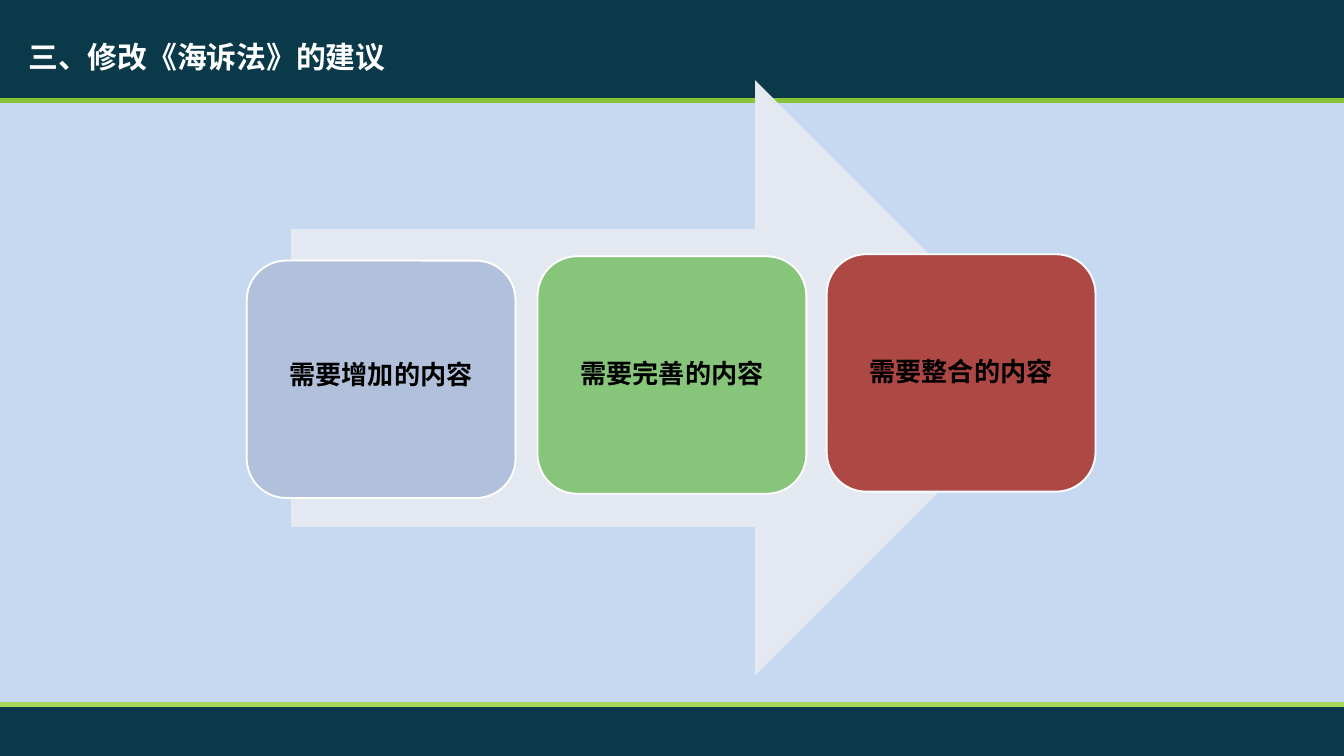
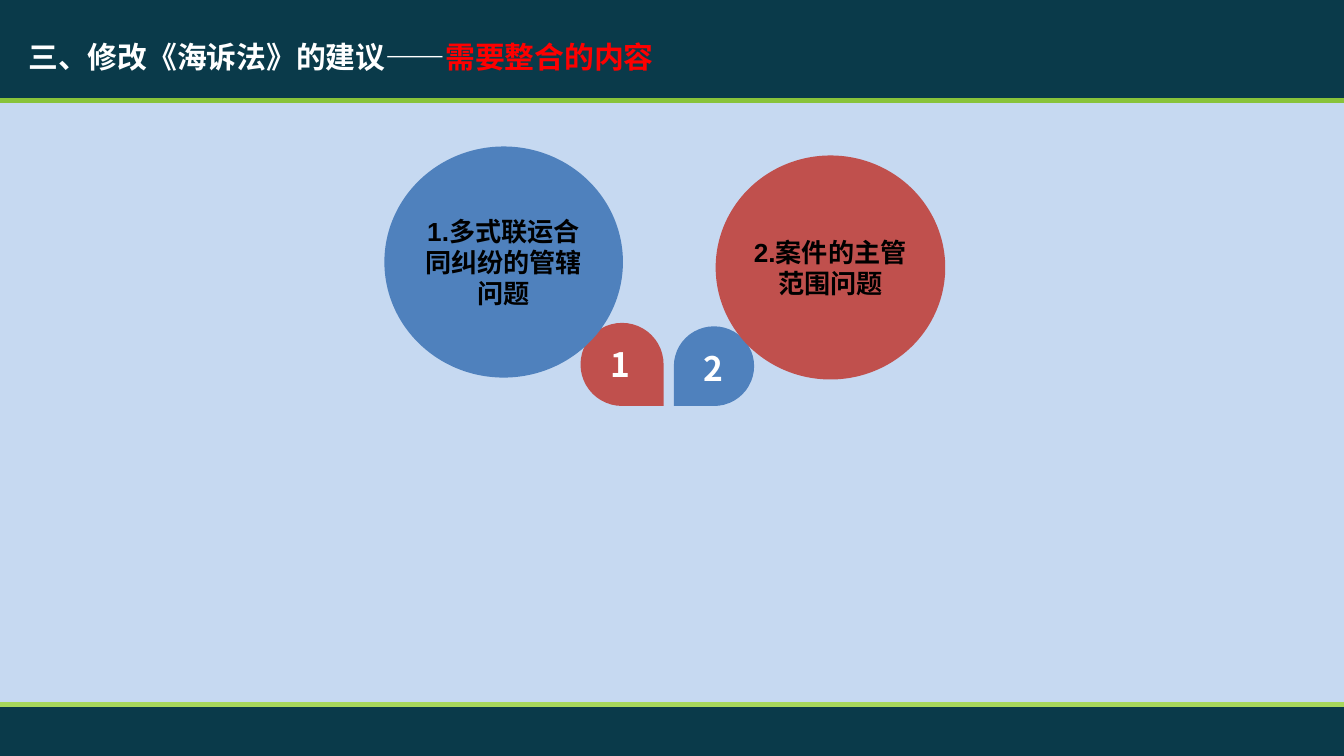
from dataclasses import dataclass

from lxml.etree import SubElement
from pptx import Presentation
from pptx.dml.color import RGBColor
from pptx.enum.shapes import MSO_CONNECTOR, MSO_SHAPE
from pptx.enum.text import MSO_ANCHOR, MSO_AUTO_SIZE, PP_ALIGN
from pptx.oxml.ns import qn
from pptx.util import Pt


@dataclass(frozen=True)
class Theme:
    # Colours
    background: str = "C6D9F1"
    band: str = "0A3A4A"
    top_rule: str = "88C33A"
    bottom_rule: str = "A7D75B"
    arrow: str = "E4E9F1"
    add_card: str = "B2C1DB"
    improve_card: str = "87C67A"
    merge_card: str = "AE4845"
    blue: str = "4F81BD"
    red: str = "C0504D"
    accent: str = "FF0000"
    white: str = "FFFFFF"
    black: str = "000000"
    # Fonts and sizes
    latin: str = "Arial"
    chinese: str = "Noto Sans CJK SC"
    title_size: float = 16
    body_size: float = 14
    number_size: float = 18


THEME = Theme()
WIDTH, HEIGHT = 720, 405
TITLE = "三、修改《海诉法》的建议"


def rgb(value):
    return RGBColor.from_string(value)


def set_all(target, values):
    for name, value in values.items():
        setattr(target, name, value)


def add_span(para, text, size, color, font):
    span = para.add_run()
    span.text = text
    set_all(span.font, {"size": Pt(size), "bold": True, "name": font})
    span.font.color.rgb = rgb(color)
    east_asian = SubElement(span.font._element, qn("a:ea"))
    east_asian.set("typeface", THEME.chinese)


def set_frame(shape, margins, **values):
    """Margins are (horizontal, vertical) in points."""
    across, down = (Pt(margin) for margin in margins)
    frame = shape.text_frame
    set_all(frame, {"margin_left": across, "margin_right": across,
                    "margin_top": down, "margin_bottom": down,
                    "word_wrap": True, "auto_size": MSO_AUTO_SIZE.NONE,
                    "vertical_anchor": MSO_ANCHOR.MIDDLE, **values})
    return frame


def add_figure(page, kind, place, fill, line=None, line_width=1, rotation=0):
    shape = page.shapes.add_shape(kind, *map(Pt, place))
    shape.shadow.inherit = False
    shape.rotation = rotation
    shape.fill.solid()
    shape.fill.fore_color.rgb = rgb(fill)
    if line:
        shape.line.color.rgb = rgb(line)
        shape.line.width = Pt(line_width)
    else:
        shape.line.fill.background()
    return shape


def add_rule(page, top, color):
    rule = page.shapes.add_connector(
        MSO_CONNECTOR.STRAIGHT, Pt(0), Pt(top), Pt(WIDTH), Pt(top))
    rule.line.color.rgb = rgb(color)
    rule.line.width = Pt(2.5)
    SubElement(rule._element.spPr, qn("a:effectLst"))
    return rule


def style_layout(layout, page):
    """Draw the bands on a page, then move them to its layout."""
    layout.background.fill.solid()
    layout.background.fill.fore_color.rgb = rgb(THEME.background)
    top_edge, bottom_edge = 54, 377.5
    parts = [
        add_figure(page, MSO_SHAPE.RECTANGLE, (0, 0, WIDTH, top_edge), THEME.band),
        add_rule(page, top_edge, THEME.top_rule),
        add_figure(page, MSO_SHAPE.RECTANGLE,
                   (0, bottom_edge, WIDTH, HEIGHT - bottom_edge), THEME.band),
        add_rule(page, bottom_edge, THEME.bottom_rule),
    ]
    for index, part in enumerate(parts, start=2):
        layout.shapes._spTree.insert(index, part._element)


def set_title(page, width, height, *spans):
    title = page.shapes.title
    set_all(title, {"left": Pt(8), "top": Pt(17.3),
                    "width": Pt(width), "height": Pt(height)})
    frame = set_frame(title, (7.2, 3.6), vertical_anchor=MSO_ANCHOR.TOP)
    para = frame.paragraphs[0]
    para.alignment = PP_ALIGN.LEFT
    for text, color in spans:
        add_span(para, text, THEME.title_size, color, THEME.chinese)


def add_card(page, left, top, text, fill, spacing):
    width, height, inset = 144, 127.2, 6.2
    add_figure(page, MSO_SHAPE.ROUNDED_RECTANGLE,
               (left, top, width, height), fill, THEME.white)
    box = page.shapes.add_textbox(
        Pt(left + inset), Pt(top + inset),
        Pt(width - 2 * inset), Pt(height - 2 * inset))
    para = set_frame(box, (7.2, 7.2)).paragraphs[0]
    set_all(para, {"alignment": PP_ALIGN.CENTER, "line_spacing": spacing,
                   "space_after": Pt(5)})
    add_span(para, text, THEME.body_size, THEME.black, THEME.latin)


def add_badge(page, place, rotation, number, fill):
    add_figure(page, MSO_SHAPE.TEAR, place, fill, rotation=rotation)
    left, top = place[:2]
    label = add_figure(page, MSO_SHAPE.RECTANGLE,
                       (left + 8.3, top + 7.6, 26, 29), fill)
    para = set_frame(label, (7.2, 3.6), word_wrap=False).paragraphs[0]
    para.alignment = PP_ALIGN.CENTER
    add_span(para, number, THEME.number_size, THEME.white, THEME.chinese)


def add_topic(page, place, lines, fill):
    circle = add_figure(page, MSO_SHAPE.OVAL, place, fill, fill, 3)
    frame = set_frame(circle, (0, 2.9))
    for index, text in enumerate(lines):
        para = frame.add_paragraph() if index else frame.paragraphs[0]
        para.alignment = PP_ALIGN.CENTER
        add_span(para, text, THEME.body_size, THEME.black, THEME.latin)


def build_overview(page):
    set_title(page, 319, 26.6, (TITLE, THEME.white))
    add_figure(page, MSO_SHAPE.RIGHT_ARROW, (156, 43, 408, 319), THEME.arrow)
    cards = [
        (132.2, 139.6, "需要增加的内容", THEME.add_card, 0.6),
        (288, 137.3, "需要完善的内容", THEME.improve_card, 0.9),
        (442.9, 136.2, "需要整合的内容", THEME.merge_card, 0.9),
    ]
    for card in cards:
        add_card(page, *card)


def build_merge_topics(page):
    set_title(page, 482.4, 50.4, (TITLE + "——", THEME.white),
              ("需要整合的内容", THEME.accent))
    # Each badge points down to the middle, partly under its topic
    add_badge(page, (311, 173, 44.5, 44.5), 90, "1", THEME.red)
    add_topic(page, (207.4, 80, 124.8, 120.8),
              ("1.多式联运合同纠纷的管辖", "问题"), THEME.blue)
    add_badge(page, (361, 174.8, 43, 42.7), 180, "2", THEME.blue)
    add_topic(page, (384.9, 84.8, 120, 117),
              ("2.案件的主管", "范围问题"), THEME.red)


def main():
    deck = Presentation()
    deck.slide_width = Pt(WIDTH)
    deck.slide_height = Pt(HEIGHT)
    layout = deck.slide_layouts.get_by_name("Title Only")
    overview = deck.slides.add_slide(layout)
    style_layout(layout, overview)
    build_overview(overview)
    merge_topics = deck.slides.add_slide(layout)
    build_merge_topics(merge_topics)
    deck.save("out.pptx")


if __name__ == "__main__":
    main()
